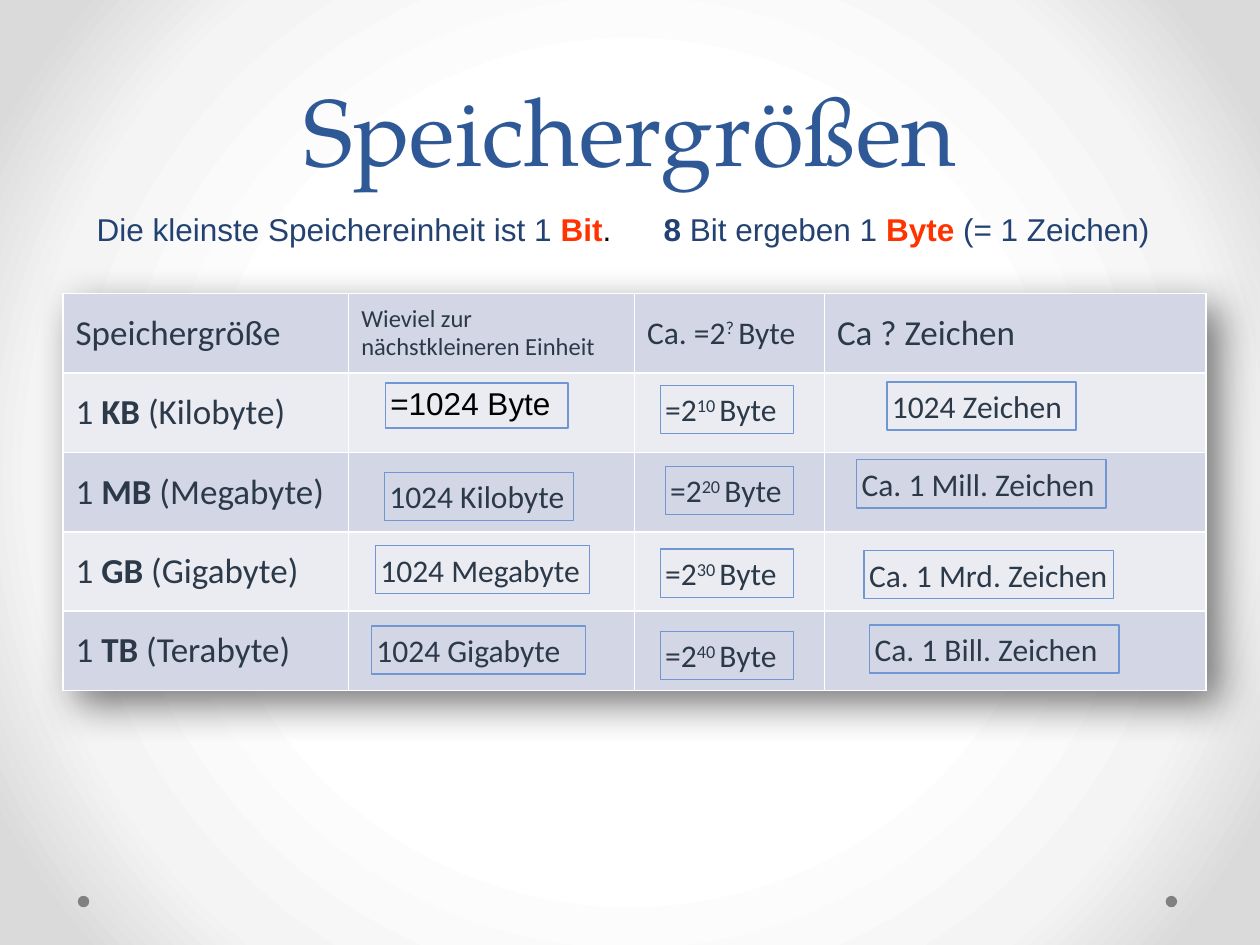
from typing import NamedTuple

from lxml import etree
from pptx import Presentation, oxml
from pptx import util as u
from pptx.dml.color import RGBColor
from pptx.enum import shapes, text
from pptx.oxml.ns import nsdecls, qn

INK, NAVY, RED, BLACK = "2B3949", "234271", "FF3300", "000000"
BANDS = ("D2D6E5", "EAECF2")


class Bit(NamedTuple):
    words: str
    bold: bool = False
    high: bool = False
    hue: str = ""


class Style(NamedTuple):
    size: float
    font: str = "Calibri"
    hue: str = INK
    lead: float | u.Pt = 1.0


class Chip(NamedTuple):
    left: float
    top: float
    width: float
    bits: list[Bit]
    style: Style = Style(18)
    height: float = 0.97


def paint(code: str) -> RGBColor:
    return RGBColor.from_string(code)


def power(lead: str, raised: str) -> list[Bit]:
    return [Bit(lead), Bit(raised + " ", high=True), Bit("Byte")]


def write(frame, bits: list[Bit], style: Style, align=text.PP_ALIGN.LEFT):
    para = frame.paragraphs[0]
    para.alignment = align
    para.line_spacing = style.lead
    for bit in bits:
        run = para.add_run()
        run.text = bit.words
        font = run.font
        font.name, font.size, font.bold = style.font, u.Pt(style.size), bit.bold
        font.color.rgb = paint(bit.hue or style.hue)
        if bit.high:
            font._element.set("baseline", "30000")
    return para


def shade(slide) -> None:
    stops = ((0, "FFFFFF"), (50, "FFFFFF"), (76, "F4F4F4"), (92, "DADADA"), (100, "DADADA"))
    marks = "".join(
        f'<a:gs pos="{spot * 1000}"><a:srgbClr val="{hue}"/></a:gs>' for spot, hue in stops
    )
    back = oxml.parse_xml(
        f'<p:bg {nsdecls("p", "a")}><p:bgPr><a:gradFill rotWithShape="1"><a:gsLst>{marks}</a:gsLst>'
        '<a:path path="circle"><a:fillToRect l="50000" t="50000" r="50000" b="50000"/></a:path>'
        "</a:gradFill><a:effectLst/></p:bgPr></p:bg>"
    )
    slide._element.cSld.insert(0, back)


def dot(slide, left: float) -> None:
    mark = slide.shapes.add_shape(
        shapes.MSO_SHAPE.OVAL, u.Cm(left), u.Cm(18.06), u.Cm(0.23), u.Cm(0.23)
    )
    mark.shadow.inherit = False
    mark.fill.solid()
    mark.fill.fore_color.rgb = paint("808080")
    mark.line.fill.background()


def label(slide, left: float, top: float, width: float, height: float):
    frame = slide.shapes.add_textbox(
        u.Cm(left), u.Cm(top), u.Cm(width), u.Cm(height)
    ).text_frame
    frame.word_wrap = True
    return frame


def edge(cell) -> None:
    props = cell._tc.get_or_add_tcPr()
    for spot, side in enumerate(("lnL", "lnR", "lnT", "lnB")):
        line = oxml.parse_xml(
            f'<a:{side} {nsdecls("a")} w="12700"><a:solidFill>'
            f'<a:srgbClr val="FFFFFF"/></a:solidFill></a:{side}>'
        )
        props.insert(spot, line)


def lift(grid) -> None:
    glow = etree.Element(qn("a:effectLst"))
    cast = etree.SubElement(
        glow, qn("a:outerShdw"), blurRad="292100", dist="139700",
        dir="2700000", algn="tl", rotWithShape="0",
    )
    tint = etree.SubElement(cast, qn("a:srgbClr"), val="333333")
    etree.SubElement(tint, qn("a:alpha"), val="65000")
    grid._tbl.tblPr.insert(0, glow)


def chart(slide) -> None:
    heads = [
        ([Bit("Speichergröße")], Style(20, lead=0.93)),
        ([Bit("Wieviel zur nächstkleineren Einheit")], Style(14, lead=0.93)),
        (power("Ca. =2", "?"), Style(18)),
        ([Bit("Ca ? Zeichen")], Style(20)),
    ]
    units = [("KB", "Kilobyte"), ("MB", "Megabyte"), ("GB", "Gigabyte"), ("TB", "Terabyte")]
    widths = (5.76, 5.76, 3.83, 7.69)
    rows = len(units) + 1
    grid = slide.shapes.add_table(
        rows, len(widths), u.Cm(1.27), u.Cm(5.92), u.Cm(sum(widths)), u.Cm(1.6 * rows)
    ).table
    lift(grid)
    for col, width in zip(grid.columns, widths):
        col.width = u.Cm(width)
    for index, row in enumerate(grid.rows):
        row.height = u.Cm(1.6)
        for cell in row.cells:
            cell.vertical_anchor = text.MSO_ANCHOR.MIDDLE
            cell.fill.solid()
            cell.fill.fore_color.rgb = paint(BANDS[index % 2])
            edge(cell)
    for index, (bits, style) in enumerate(heads):
        write(grid.cell(0, index).text_frame, bits, style)
    for index, (short, name) in enumerate(units, 1):
        bits = [Bit("1 "), Bit(short, bold=True), Bit(f" ({name})")]
        write(grid.cell(index, 0).text_frame, bits, Style(20, lead=0.93))


def place(slide, chip: Chip) -> None:
    box = slide.shapes.add_shape(
        shapes.MSO_SHAPE.RECTANGLE,
        u.Cm(chip.left), u.Cm(chip.top), u.Cm(chip.width), u.Cm(chip.height),
    )
    box.shadow.inherit = False
    box.fill.background()
    box.line.color.rgb = paint("7097D3")
    box.line.width = u.Pt(0.75)
    frame = box.text_frame
    frame.word_wrap = True
    frame.vertical_anchor = text.MSO_ANCHOR.TOP
    frame.margin_left = frame.margin_top = frame.margin_bottom = u.Cm(0.1)
    frame.margin_right = 0
    write(frame, chip.bits, chip.style)


CHIPS = [
    Chip(7.77, 7.72, 3.68, [Bit("=1024 Byte")], Style(18, "Arial", BLACK, 0.93), 0.91),
    Chip(13.31, 7.77, 2.69, power("=2", "10")),
    Chip(17.88, 7.7, 3.81, [Bit("1024 Zeichen")]),
    Chip(7.75, 9.52, 3.81, [Bit("1024 Kilobyte")]),
    Chip(13.41, 9.4, 2.59, power("=2", "20")),
    Chip(17.27, 9.27, 5.03, [Bit("Ca. 1 Mill. Zeichen")]),
    Chip(7.57, 11, 4.32, [Bit("1024 Megabyte")]),
    Chip(13.31, 11.07, 2.69, power("=2", "30")),
    Chip(17.42, 11.1, 5.03, [Bit("Ca. 1 Mrd. Zeichen")]),
    Chip(7.49, 12.62, 4.32, [Bit("1024 Gigabyte")]),
    Chip(13.31, 12.73, 2.69, power("=2", "40")),
    Chip(17.53, 12.6, 5.03, [Bit("Ca. 1 Bill. Zeichen")]),
]
INTRO = [
    Bit("Die kleinste Speichereinheit ist 1 "), Bit("Bit", bold=True, hue=RED),
    Bit(".\t", hue=BLACK), Bit("8", bold=True), Bit(" Bit ergeben 1 "),
    Bit("Byte ", bold=True, hue=RED), Bit("(= 1 Zeichen)"),
]


def main() -> None:
    deck = Presentation()
    deck.slide_width, deck.slide_height = u.Cm(25.4), u.Cm(19.05)
    slide = deck.slides.add_slide(deck.slide_layouts[6])
    shade(slide)
    for left in (23.5, 1.57):
        dot(slide, left)
    title = label(slide, 1.27, 0.33, 22.86, 3.53)
    title.vertical_anchor = text.MSO_ANCHOR.BOTTOM
    look = Style(54, "TeX Gyre Pagella", "2F5897", u.Pt(58))
    write(title, [Bit("Speichergrößen")], look, text.PP_ALIGN.CENTER)
    chart(slide)
    para = write(label(slide, 1.7, 4.11, 22, 1.02), INTRO, Style(18, "Arial", NAVY))
    tabs = etree.SubElement(para._p.get_or_add_pPr(), qn("a:tabLst"))
    etree.SubElement(tabs, qn("a:tab"), pos=str(u.Cm(11.43)), algn="l")
    for chip in CHIPS:
        place(slide, chip)
    deck.save("out.pptx")


if __name__ == "__main__":
    main()
